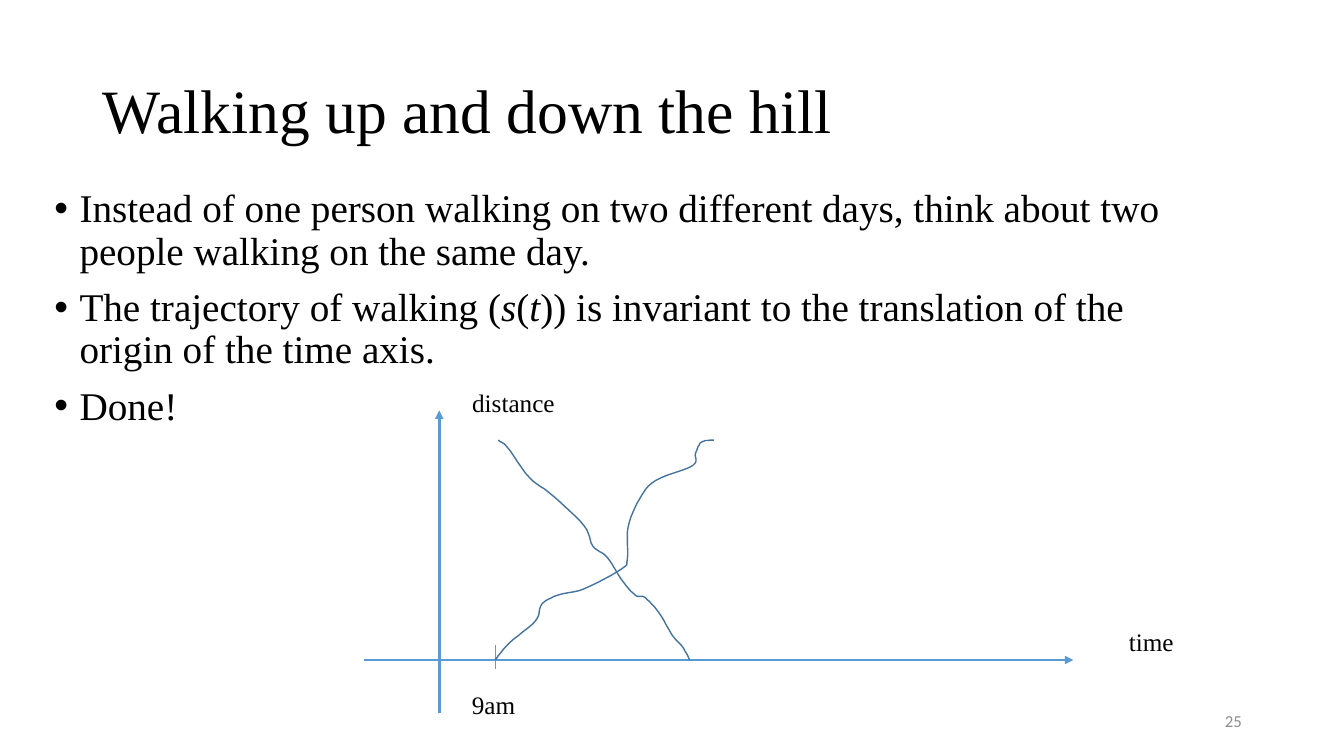
from lxml import etree
from pptx import Presentation
from pptx.dml.color import RGBColor
from pptx.enum.shapes import MSO_CONNECTOR
from pptx.enum.text import MSO_ANCHOR, MSO_AUTO_SIZE, PP_ALIGN
from pptx.oxml.ns import qn
from pptx.util import Cm, Pt

LEFT, RIGHT = PP_ALIGN.LEFT, PP_ALIGN.RIGHT
TOP, MIDDLE = MSO_ANCHOR.TOP, MSO_ANCHOR.MIDDLE
NO_FIT = MSO_AUTO_SIZE.NONE
STRAIGHT = MSO_CONNECTOR.STRAIGHT

DISTANCE_AXIS_X, TIME_AXIS_Y, NINE_AM_X = 11.07, 16.63, 12.48
UNITS_PER_CM = 100
STEPS_PER_BEND = 6

CLIMB = [(0, 0), (0.36, 0.43), (1.02, 0.99), (1.17, 1.4), (1.57, 1.63),
         (2.26, 1.8), (3.18, 2.29), (3.33, 2.54), (3.35, 3.35), (3.63, 4.04),
         (4.04, 4.52), (4.98, 4.9), (5.05, 5.21), (5.2, 5.49), (5.51, 5.54)]
DESCENT = [(0.08, 5.54), (0.33, 5.33), (0.86, 4.6), (1.45, 4.14), (2.24, 3.38),
           (2.46, 2.87), (2.82, 2.59), (3.18, 2.03), (3.53, 1.63), (3.78, 1.57),
           (4.14, 1.17), (4.47, 0.61), (4.72, 0.33), (4.9, 0)]


def rgb(value):
    return RGBColor.from_string(value)


def add_text(p, text, size=18, font="Times New Roman", color="000000", italic=False):
    r = p.add_run()
    r.text = text
    r.font.size = Pt(size)
    r.font.name = font
    r.font.italic = italic
    r.font.color.rgb = rgb(color)


def catmull_rom(a, b, c, d, t):
    return b + t / 2 * (c - a + t * (2 * a - 5 * b + 4 * c - d + t * (3 * (b - c) + d - a)))


def smooth(bends):
    padded = [bends[0], *bends, bends[-1]]
    points = []
    for four in zip(padded, padded[1:], padded[2:], padded[3:]):
        times, distances = zip(*four)
        for step in range(STEPS_PER_BEND):
            t = step / STEPS_PER_BEND
            points.append((catmull_rom(*times, t), catmull_rom(*distances, t)))
    return points + [bends[-1]]


class Deck:
    axis_color = "5B9BD5"
    curve_color = "43739E"

    def __init__(self):
        self.prs = Presentation()
        self.prs.slide_width = Cm(33.87)
        self.prs.slide_height = Cm(19.05)
        self.s = self.prs.slides.add_slide(self.prs.slide_layouts[5])

    def title(self, text, x, y, w, h):
        sp = self.s.shapes.title
        sp.left, sp.top, sp.width, sp.height = Cm(x), Cm(y), Cm(w), Cm(h)
        tf = sp.text_frame
        tf.auto_size = NO_FIT
        tf.vertical_anchor = MIDDLE
        p = tf.paragraphs[0]
        p.alignment = LEFT
        p.line_spacing = 0.9
        add_text(p, text, size=44)

    def box(self, x, y, w, h, wrap=True, anchor=TOP):
        tf = self.s.shapes.add_textbox(Cm(x), Cm(y), Cm(w), Cm(h)).text_frame
        tf.word_wrap = wrap
        tf.vertical_anchor = anchor
        return tf

    def label(self, text, x, y, w, h=1.02, wrap=True, anchor=TOP, align=LEFT, **style):
        p = self.box(x, y, w, h, wrap, anchor).paragraphs[0]
        p.alignment = align
        add_text(p, text, **style)

    def bullets(self, items, x, y, w, h):
        tf = self.box(x, y, w, h)
        for i, item in enumerate(items):
            p = tf.add_paragraph() if i else tf.paragraphs[0]
            p.line_spacing = 0.9
            p.space_before = Pt(10)
            pPr = p._p.get_or_add_pPr()
            pPr.set("marL", str(Pt(18)))
            pPr.set("indent", str(-Pt(18)))
            etree.SubElement(pPr, qn("a:buFont")).set("typeface", "Arial")
            etree.SubElement(pPr, qn("a:buChar")).set("char", "•")
            for text, italic in item:
                add_text(p, text, size=28, italic=italic)

    def line(self, x1, y1, x2, y2, width=2, arrow=True):
        c = self.s.shapes.add_connector(STRAIGHT, Cm(x1), Cm(y1), Cm(x2), Cm(y2))
        c.line.color.rgb = rgb(self.axis_color)
        c.line.width = Pt(width)
        if arrow:
            etree.SubElement(c.line._get_or_add_ln(), qn("a:tailEnd")).set("type", "triangle")
        etree.SubElement(c._element.spPr, qn("a:effectLst"))

    def walk(self, bends):
        points = [((NINE_AM_X + time) * UNITS_PER_CM, (TIME_AXIS_Y - distance) * UNITS_PER_CM)
                  for time, distance in smooth(bends)]
        builder = self.s.shapes.build_freeform(*points[0], scale=Cm(1) / UNITS_PER_CM)
        builder.add_line_segments(points[1:], close=False)
        sp = builder.convert_to_shape()
        sp.shadow.inherit = False
        sp.fill.background()
        sp.line.color.rgb = rgb(self.curve_color)
        sp.line.width = Pt(1)


def main():
    deck = Deck()
    deck.title("Walking up and down the hill", 2.34, 1.02, 29.21, 3.68)
    deck.bullets([
        [("Instead of one person walking on two different days, think about two "
          "people walking on the same day.", False)],
        [("The trajectory of walking (", False), ("s", True), ("(", False), ("t", True),
         (")) is invariant to the translation of the origin of the time axis.", False)],
        [("Done!", False)],
    ], 1.12, 4.64, 29.21, 7.04)
    deck.label("25", 23.93, 17.65, 7.62, anchor=MIDDLE, align=RIGHT,
               size=12, font="Calibri", color="8C8C8C")
    deck.line(9.17, TIME_AXIS_Y, 27.05, TIME_AXIS_Y)
    deck.line(DISTANCE_AXIS_X, 17.96, DISTANCE_AXIS_X, 10.34)
    deck.line(NINE_AM_X, 16.26, NINE_AM_X, 16.87, width=0.5, arrow=False)
    deck.label("9am", 11.64, 17.25, 1.65, wrap=False)
    deck.label("time", 28.2, 15.67, 3.33)
    deck.label("distance", 11.65, 9.63, 3.3)
    for bends in (CLIMB, DESCENT):
        deck.walk(bends)
    deck.prs.save("out.pptx")


if __name__ == "__main__":
    main()
